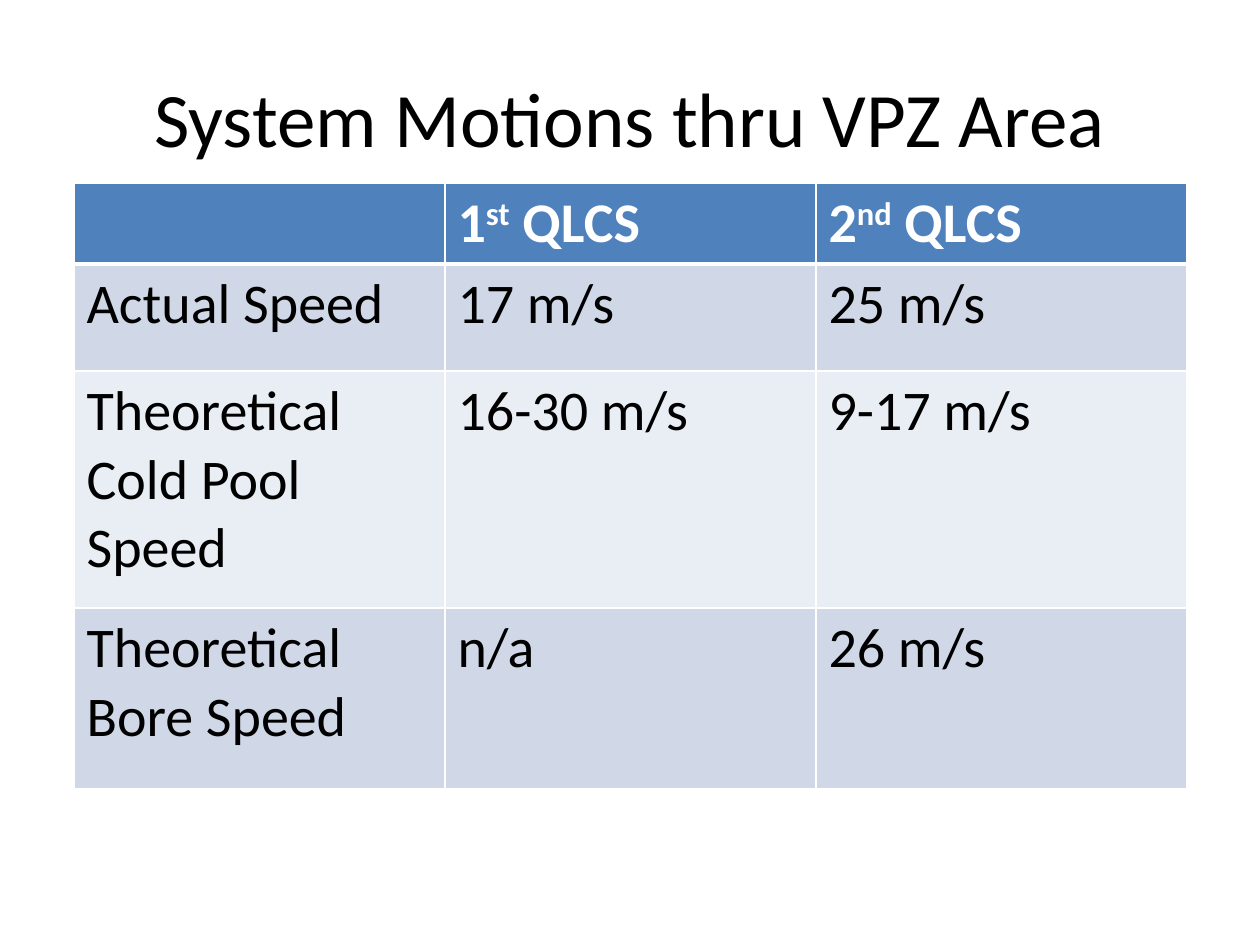
from lxml.etree import SubElement
from pptx import Presentation
from pptx.dml.color import RGBColor
from pptx.enum.text import MSO_ANCHOR, PP_ALIGN
from pptx.oxml.ns import qn
from pptx.util import Emu, Pt

TITLE = "System Motions thru VPZ Area"
# "^" marks the start and end of a superscript
ROWS = [
    ["", "1^st^ QLCS", "2^nd^ QLCS"],
    ["Actual Speed", "17 m/s", "25 m/s"],
    ["Theoretical Cold Pool Speed", "16-30 m/s", "9-17 m/s"],
    ["Theoretical Bore Speed", "n/a", "26 m/s"],
]
COLORS = {
    "header": "4F81BD",
    "odd": "D0D8E8",
    "even": "E9EDF4",
    "white": "FFFFFF",
    "black": "000000",
}
FONT = "Calibri"
PX = 914400 // 126
SLIDE_SIZE = (1260, 945)
TITLE_BOX = (63, 38, 1134, 157)
TABLE_LEFT, TABLE_TOP = 74, 183
COLUMN_WIDTH = 371
ROW_HEIGHTS = [74, 107, 237, 181]


def px(*lengths):
    return [Emu(round(length * PX)) for length in lengths]


def write(frame, text, size, color="black", bold=False, align=PP_ALIGN.LEFT):
    frame.word_wrap = True
    paragraph = frame.paragraphs[0]
    paragraph.alignment = align
    paragraph.font.size = Pt(size)
    for index, part in enumerate(text.split("^")):
        if not part:
            continue
        run = paragraph.add_run()
        run.text = part
        run.font.name = FONT
        run.font.size = Pt(size)
        run.font.bold = bold
        run.font.color.rgb = RGBColor.from_string(COLORS[color])
        if index % 2:
            run.font._element.set("baseline", "30000")


def set_border(cell, side, points):
    properties = cell._tc.get_or_add_tcPr()
    line = SubElement(properties, qn(f"a:ln{side}"), w=str(Pt(points)))
    fill = SubElement(line, qn("a:solidFill"))
    SubElement(fill, qn("a:srgbClr"), val=COLORS["white"])


def add_title(slide):
    frame = slide.shapes.add_textbox(*px(*TITLE_BOX)).text_frame
    frame.vertical_anchor = MSO_ANCHOR.MIDDLE
    write(frame, TITLE, size=44, align=PP_ALIGN.CENTER)


def add_speed_table(slide):
    column_count = len(ROWS[0])
    area = px(TABLE_LEFT, TABLE_TOP, COLUMN_WIDTH * column_count, sum(ROW_HEIGHTS))
    table = slide.shapes.add_table(len(ROWS), column_count, *area).table
    for column in table.columns:
        column.width = px(COLUMN_WIDTH)[0]
    for r, (values, height) in enumerate(zip(ROWS, ROW_HEIGHTS)):
        table.rows[r].height = px(height)[0]
        is_header = r == 0
        band = "header" if is_header else "odd" if r % 2 else "even"
        for c, value in enumerate(values):
            cell = table.cell(r, c)
            for side in "LRTB":
                thick = (is_header and side == "B") or (r == 1 and side == "T")
                set_border(cell, side, 3 if thick else 1)
            cell.fill.solid()
            cell.fill.fore_color.rgb = RGBColor.from_string(COLORS[band])
            write(cell.text_frame, value, size=32, bold=is_header,
                  color="white" if is_header else "black")


def main():
    deck = Presentation()
    deck.slide_width, deck.slide_height = px(*SLIDE_SIZE)
    slide = deck.slides.add_slide(deck.slide_layouts[6])
    add_speed_table(slide)
    add_title(slide)
    deck.save("out.pptx")


if __name__ == "__main__":
    main()
